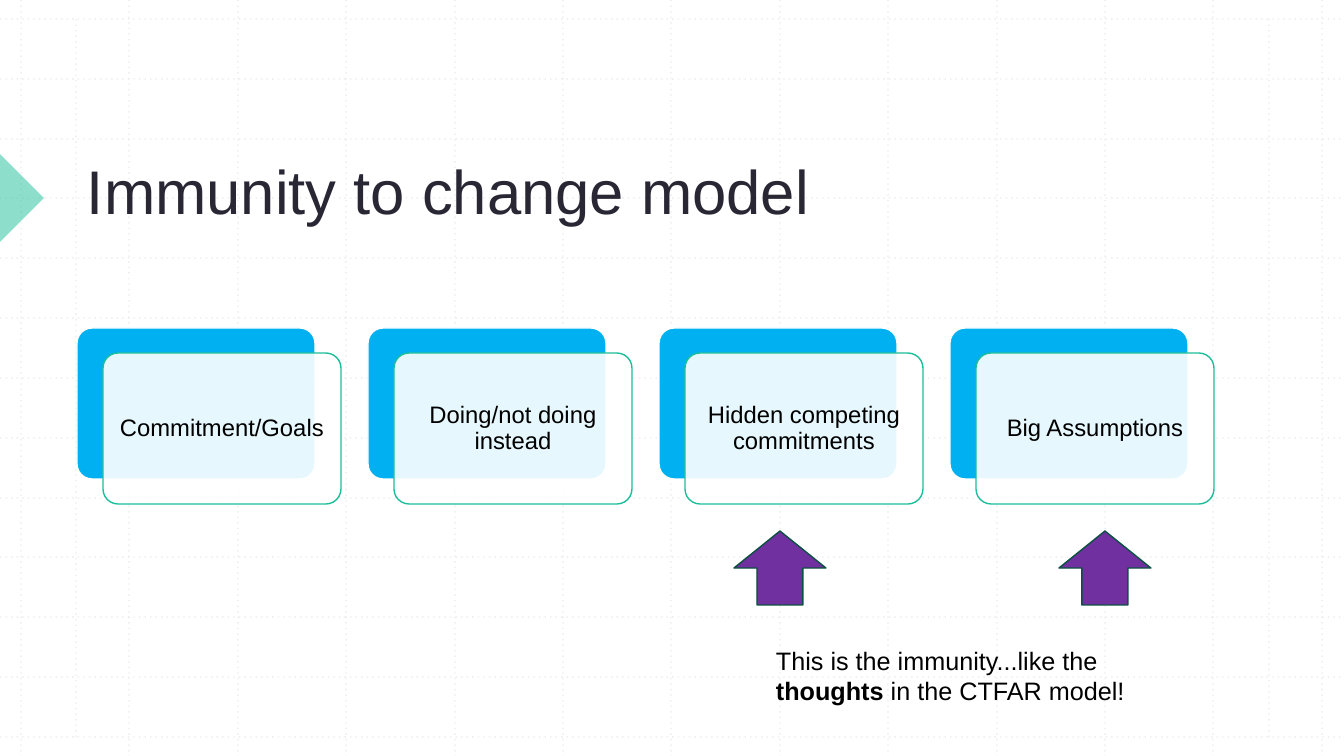
"""Build the "Immunity to change model" slide."""
import dataclasses

import lxml.etree
import pptx
import pptx.dml.color
import pptx.enum.shapes
import pptx.enum.text
import pptx.oxml.ns
import pptx.util

SHAPE = pptx.enum.shapes.MSO_SHAPE
ANCHOR = pptx.enum.text.MSO_ANCHOR
ALIGN = pptx.enum.text.PP_ALIGN
qn = pptx.oxml.ns.qn


@dataclasses.dataclass(frozen=True)
class Theme:
    font: str = "Arial"
    title: str = "2A2735"
    text: str = "000000"
    white: str = "FFFFFF"
    grid: str = "BCBCBC"
    marker: str = "1EBE9B"
    card: str = "00B0F0"
    card_line: str = "1BBE99"
    arrow: str = "7030A0"
    arrow_line: str = "0C5041"
    title_size: int = 44
    note_size: int = 18
    card_size: int = 17


def px(n):
    return pptx.util.Emu(round(n * 914400 / 100.8))


def rgb(value):
    return pptx.dml.color.RGBColor.from_string(value)


class Deck:
    def __init__(self, theme):
        self.theme = theme
        self.prs = pptx.Presentation()
        self.prs.slide_width, self.prs.slide_height = px(1344), px(756)
        self.s = self.prs.slides.add_slide(self.prs.slide_layouts[6])

    def set_alpha(self, sp, percent):
        color = sp.element.spPr.find(".//" + qn("a:srgbClr"))
        lxml.etree.SubElement(color, qn("a:alpha"), val=str(percent * 1000))

    def grid_line(self, x1, y1, x2, y2):
        c = self.s.shapes.add_connector(
            pptx.enum.shapes.MSO_CONNECTOR.STRAIGHT, px(x1), px(y1), px(x2), px(y2))
        c.line.width = pptx.util.Pt(1)
        c.line.color.rgb = rgb(self.theme.grid)
        self.set_alpha(c, 30)
        spPr = c.element.spPr
        lxml.etree.SubElement(spPr.find(qn("a:ln")), qn("a:prstDash"), val="dot")
        lxml.etree.SubElement(spPr, qn("a:effectLst"))

    def shape(self, kind, x, y, w, h, fill, line=None, alpha=100, rotation=0):
        sp = self.s.shapes.add_shape(kind, px(x), px(y), px(w), px(h))
        sp.shadow.inherit = False
        sp.rotation = rotation
        sp.fill.solid()
        sp.fill.fore_color.rgb = rgb(fill)
        if alpha < 100:
            self.set_alpha(sp, alpha)
        if line:
            sp.line.color.rgb = rgb(line)
            sp.line.width = pptx.util.Pt(1)
        else:
            sp.line.fill.background()
        return sp

    def put_text(self, sp, parts, size, color, anchor, align=ALIGN.LEFT, margins=(10, 5)):
        tf = sp.text_frame
        tf.word_wrap = True
        tf.vertical_anchor = anchor
        tf.margin_left = tf.margin_right = px(margins[0])
        tf.margin_top = tf.margin_bottom = px(margins[1])
        p = tf.paragraphs[0]
        p.alignment = align
        for text, bold in parts:
            r = p.add_run()
            r.text = text
            r.font.name = self.theme.font
            r.font.size = pptx.util.Pt(size)
            r.font.bold = bold
            r.font.color.rgb = rgb(color)
        return p

    def text(self, x, y, w, h, parts, size, color, anchor=ANCHOR.TOP):
        sp = self.s.shapes.add_textbox(px(x), px(y), px(w), px(h))
        self.put_text(sp, parts, size, color, anchor)

    def card(self, x, y, label):
        t = self.theme
        w, h = 238, 151
        back = self.shape(SHAPE.ROUNDED_RECTANGLE, x, y, w, h, t.card, t.white)
        front = self.shape(SHAPE.ROUNDED_RECTANGLE, x + 26, y + 25, w, h,
                           t.white, t.card_line, alpha=90)
        back.adjustments[0] = front.adjustments[0] = 0.1
        p = self.put_text(front, [(label, False)], t.card_size, t.text,
                          ANCHOR.MIDDLE, ALIGN.CENTER, (7, 7))
        p.line_spacing = 0.9

    def arrow(self, x, y):
        self.shape(SHAPE.RIGHT_ARROW, x, y, 74, 92, self.theme.arrow,
                   self.theme.arrow_line, rotation=270)


def main():
    theme = Theme()
    deck = Deck(theme)
    for i in range(13):
        x, y = round(21 + 108.4 * i), round(19 + 59.83 * i)
        deck.grid_line(x, 0, x, 756)
        deck.grid_line(0, y, 1344, y)
    for x in (76, 1269):
        deck.grid_line(x, 19, x, 737)

    deck.shape(SHAPE.RIGHT_TRIANGLE, -31, 167, 62, 62, theme.marker, alpha=50, rotation=225)
    deck.text(77, 80, 1138, 152, [("Immunity to change model", False)],
              theme.title_size, theme.title, ANCHOR.BOTTOM)

    labels = ("Commitment/Goals", "Doing/not doing instead",
              "Hidden competing commitments", "Big Assumptions")
    for i, label in enumerate(labels):
        deck.card(77 + 291 * i, 328, label)

    for x in (743, 1068):
        deck.arrow(x, 522)
    deck.text(766, 640, 385, 71,
              [("This is the immunity...like the ", False), ("thoughts", True),
               (" in the CTFAR model!", False)], theme.note_size, theme.text)
    deck.prs.save("out.pptx")


if __name__ == "__main__":
    main()
